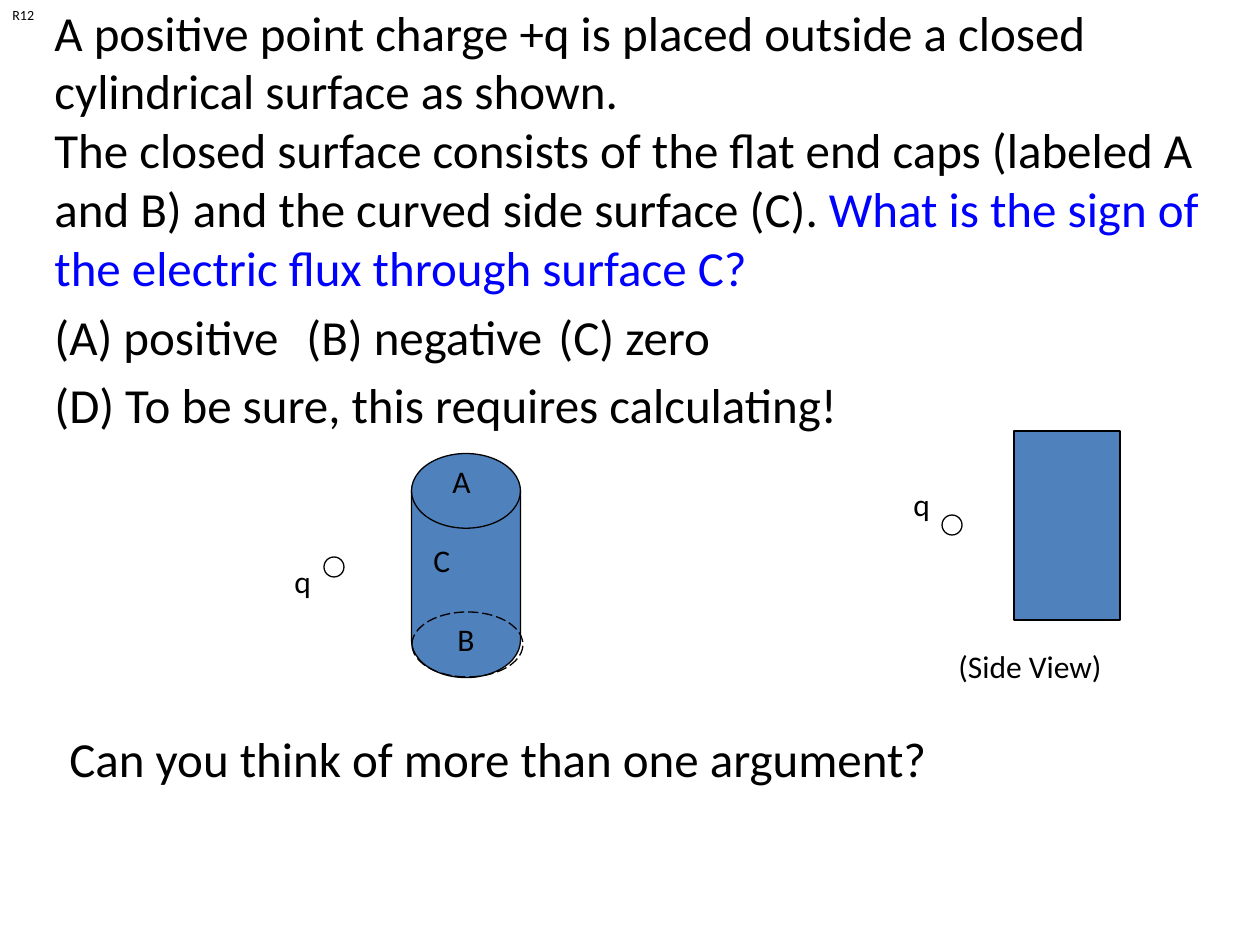
from pptx import Presentation
from pptx.dml.color import RGBColor
from pptx.enum.dml import MSO_LINE
from pptx.enum.shapes import MSO_SHAPE as SHAPE
from pptx.util import Emu, Pt

EMU_PER_PX = 914400 / 126
FONT = "Calibri"
COLORS = {"ink": "000000", "question": "0000FF", "surface": "4F81BD"}


def px(n):
    return Emu(round(n * EMU_PER_PX))


def rgb(name):
    return RGBColor.from_string(COLORS[name])


def style(font, size, color="ink"):
    font.name = FONT
    font.size = Pt(size)
    font.color.rgb = rgb(color)


def add_box(slide, x, y, w, h):
    tf = slide.shapes.add_textbox(px(x), px(y), px(w), px(h)).text_frame
    tf.word_wrap = True
    return tf


def add_label(slide, text, x, y, w, h=63, size=18):
    p = add_box(slide, x, y, w, h).paragraphs[0]
    p.text = text
    style(p.font, size)


def add_outline(slide, kind, x, y, w, h, fill=None, rotation=0, dash=None):
    sp = slide.shapes.add_shape(kind, px(x), px(y), px(w), px(h))
    sp.shadow.inherit = False
    sp.rotation = rotation
    if fill:
        sp.fill.solid()
        sp.fill.fore_color.rgb = rgb(fill)
    else:
        sp.fill.background()
    sp.line.color.rgb = rgb("ink")
    sp.line.width = Pt(0.75)
    if dash:
        sp.line.dash_style = dash


def add_problem(slide, paragraphs):
    tf = add_box(slide, 42, -4, 1228, 455)
    for i, runs in enumerate(paragraphs):
        p = tf.paragraphs[0] if i == 0 else tf.add_paragraph()
        p.space_before = Pt(5.6)
        style(p.font, 28)
        for part, color in runs:
            for j, line in enumerate(part.split("\n")):
                if j:
                    p.add_line_break()
                r = p.add_run()
                r.text = line
                style(r.font, 28, color)


def main():
    """Build the slide on electric flux through a closed cylinder."""
    prs = Presentation()
    prs.slide_width, prs.slide_height = px(1260), px(945)
    slide = prs.slides.add_slide(prs.slide_layouts[6])

    add_problem(slide, [
        [("A positive point charge +q is placed outside a closed cylindrical "
          "surface as shown.\nThe closed surface consists of the flat end caps "
          "(labeled A and B) and the curved side surface (C). ", "ink"),
         ("What is the sign of the electric flux through surface C?", "question")],
        [("(A) positive\t(B) negative\t(C) zero", "ink")],
        [("(D) To be sure, this requires calculating!", "ink")],
    ])

    add_outline(slide, SHAPE.FLOWCHART_DIRECT_ACCESS_STORAGE, 354, 511, 224, 109,
                fill="surface", rotation=270)
    add_outline(slide, SHAPE.RECTANGLE, 1014, 431, 106, 189, fill="surface")
    for x, y in [(324, 557), (942, 515)]:
        add_outline(slide, SHAPE.OVAL, x, y, 20, 20)
    add_outline(slide, SHAPE.OVAL, 412, 612, 111, 65, dash=MSO_LINE.LONG_DASH)

    for text, x, y, w in [
        ("(Side View)", 946, 641, 241),
        ("q", 901, 479, 49),
        ("q", 282, 556, 49),
        ("A", 440, 456, 53),
        ("B", 445, 614, 53),
        ("C", 421, 535, 55),
    ]:
        add_label(slide, text, x, y, w)
    add_label(slide, "Can you think of more than one argument?", 57, 722, 966, 72, 28)
    add_label(slide, "R12", 0, 0, 48, 30, 8)

    prs.save("out.pptx")


if __name__ == "__main__":
    main()
